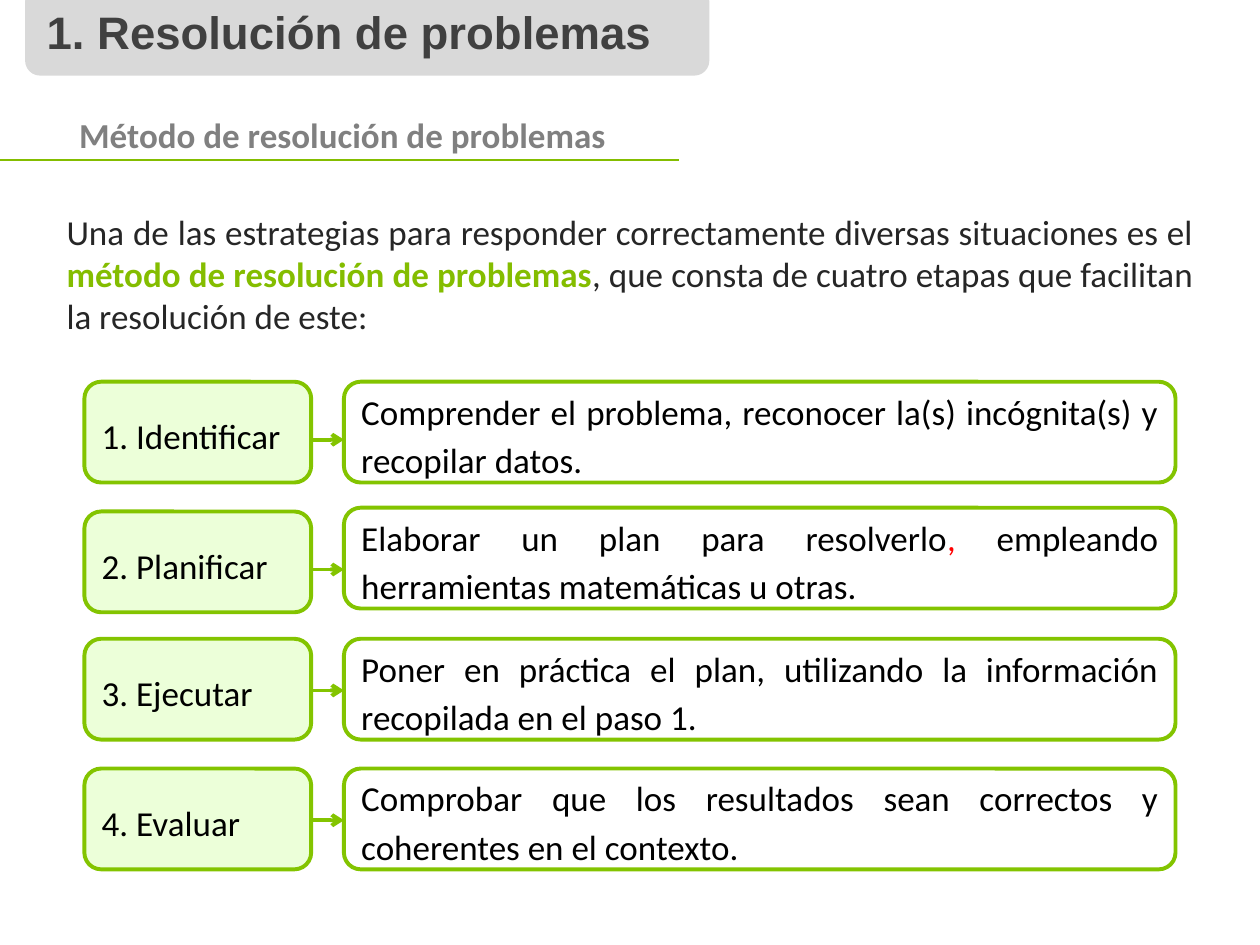
"""Builds the slide on the four stages of problem solving."""
import pptx
import pptx.util
import pptx.dml.color
import pptx.enum.shapes
import pptx.enum.text
import pptx.oxml.ns
from lxml import etree

Inches, Pt = pptx.util.Inches, pptx.util.Pt
ALIGN = pptx.enum.text.PP_ALIGN
ROUNDED = pptx.enum.shapes.MSO_SHAPE.ROUNDED_RECTANGLE
STRAIGHT = pptx.enum.shapes.MSO_CONNECTOR.STRAIGHT
COLORS = {
    "banner": "D9D9D9", "title": "404040", "subtitle": "808080", "body": "262626",
    "accent": "84BD00", "border": "83C400", "step": "ECFFD9", "white": "FFFFFF",
    "black": "000000", "red": "FF0000",
}
RGB = {k: pptx.dml.color.RGBColor.from_string(v) for k, v in COLORS.items()}


def write(sp, runs, align, size=20, font="Calibri"):
    tf = sp.text_frame
    tf.word_wrap = True
    tf.auto_size = pptx.enum.text.MSO_AUTO_SIZE.NONE
    p = tf.paragraphs[0]
    p.alignment = align
    for text, color, bold in runs:
        r = p.add_run()
        r.text = text
        r.font.name, r.font.size, r.font.bold = font, Pt(size), bold
        r.font.color.rgb = RGB[color]
    return p


def add_line(x1, x2, y, color, width):
    cn = s.shapes.add_connector(STRAIGHT, Inches(x1), Inches(y), Inches(x2), Inches(y))
    cn.line.color.rgb = RGB[color]
    cn.line.width = Pt(width)
    etree.SubElement(cn._element.spPr, pptx.oxml.ns.qn("a:effectLst"))
    return cn


prs = pptx.Presentation()
prs.slide_width, prs.slide_height = Inches(10), Inches(7.5)
s = prs.slides.add_slide(prs.slide_layouts[5])

title = s.shapes.title
title.left, title.top, title.width, title.height = Inches(0.27), Inches(-0.02), Inches(5.2), Inches(0.54)
title.text_frame.vertical_anchor = pptx.enum.text.MSO_ANCHOR.TOP
write(title, [("1. Resolución de problemas", "title", True)], ALIGN.LEFT, 26, "Arial")

banner = s.shapes.add_shape(ROUNDED, Inches(0.2), Inches(-0.11), Inches(5.43), Inches(0.71))
banner.shadow.inherit = False
banner.fill.solid()
banner.fill.fore_color.rgb = RGB["banner"]
banner.line.fill.background()
title._element.addprevious(banner._element)

subtitle = s.shapes.add_textbox(Inches(0.53), Inches(0.85), Inches(5.33), Inches(0.44))
write(subtitle, [("Método de resolución de problemas", "subtitle", True)], ALIGN.LEFT)
add_line(-0.12, 5.39, 1.27, "accent", 0.75)

intro = s.shapes.add_textbox(Inches(0.43), Inches(1.62), Inches(9.14), Inches(1.26))
write(intro, [
    ("Una de las estrategias para responder correctamente diversas situaciones es el ", "body", False),
    ("método de resolución de problemas", "accent", True),
    (", que consta de cuatro etapas que facilitan la resolución de este:", "body", False),
], ALIGN.JUSTIFY)

steps = [
    ("1. Identificar", 3.03, 3.03, 3.49,
     [("Comprender el problema, reconocer la(s) incógnita(s) y recopilar datos.", "black", False)]),
    ("2. Planificar", 4.06, 4.03, 4.52,
     [("Elaborar un plan para resolverlo", "black", False), (",", "red", False),
      (" empleando herramientas matemáticas u otras.", "black", False)]),
    ("3. Ejecutar", 5.07, 5.07, 5.48,
     [("Poner en práctica el plan, utilizando la información recopilada en el paso 1.", "black", False)]),
    ("4. Evaluar", 6.1, 6.1, 6.51,
     [("Comprobar que los resultados sean correctos y coherentes en el contexto.", "black", False)]),
]
for name, name_top, detail_top, arrow_y, detail in steps:
    boxes = [
        (0.67, name_top, 1.8, "step", [(name, "black", False)], ALIGN.LEFT),
        (2.73, detail_top, 6.6, "white", detail, ALIGN.JUSTIFY),
    ]
    for left, top, width, fill, runs, align in boxes:
        sp = s.shapes.add_shape(ROUNDED, Inches(left), Inches(top), Inches(width), Inches(0.8))
        sp.shadow.inherit = False
        sp.fill.solid()
        sp.fill.fore_color.rgb = RGB[fill]
        sp.line.color.rgb = RGB["border"]
        sp.line.width = Pt(2.25)
        sp.text_frame.vertical_anchor = pptx.enum.text.MSO_ANCHOR.MIDDLE
        p = write(sp, runs, align)
        p.line_spacing = 1.15
        p.space_after = Pt(10)
    arrow = add_line(2.47, 2.73, arrow_y, "border", 2.25)
    etree.SubElement(arrow.line._get_or_add_ln(), pptx.oxml.ns.qn("a:tailEnd"), type="arrow")

prs.save("out.pptx")
